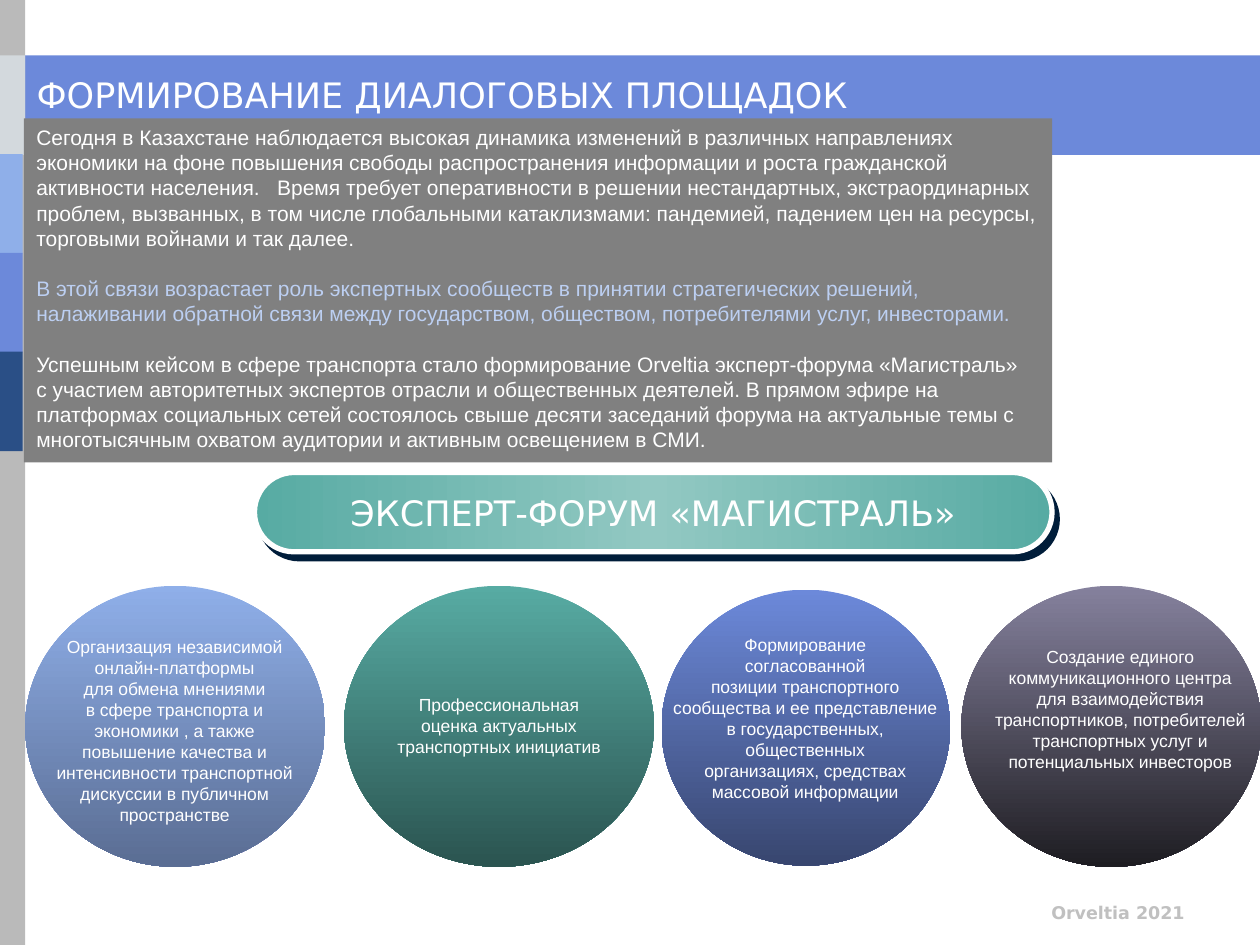
from pptx import Presentation
from pptx.dml.color import RGBColor
from pptx.enum.shapes import MSO_SHAPE as SHAPE
from pptx.enum.text import MSO_ANCHOR as ANCHOR, PP_ALIGN as ALIGN
from pptx.oxml import parse_xml
from pptx.oxml.ns import nsdecls
from pptx.util import Inches, Pt

SLIDE_W, SLIDE_H = 10, 7.5
BAND_TOP, BAND_H = 0.44, 0.79
LAST_BAND_TOP = 2.79
HEADING_FONT = "DejaVu Sans"
WHITE = "FFFFFF"

SIDE_BANDS = [(0, "D3D9DD"), (-0.02, "8FAFE9"), (-0.02, "6C89DA"), (-0.02, "2A4F86")]

BODY = [
    ("Сегодня в Казахстане наблюдается высокая динамика изменений в различных направлениях "
     "экономики на фоне повышения свободы распространения информации и роста гражданской "
     "активности населения.   Время требует оперативности в решении нестандартных, "
     "экстраординарных проблем, вызванных, в том числе глобальными катаклизмами: пандемией, "
     "падением цен на ресурсы, торговыми войнами и так далее.", WHITE),
    ("В этой связи возрастает роль экспертных сообществ в принятии стратегических решений, "
     "налаживании обратной связи между государством, обществом, потребителями услуг, "
     "инвесторами.", "BCCFF2"),
    ("Успешным кейсом в сфере транспорта стало формирование Orveltia эксперт-форума "
     "«Магистраль»  с участием авторитетных экспертов отрасли и общественных деятелей. "
     "В прямом эфире на платформах социальных сетей состоялось свыше десяти заседаний форума "
     "на актуальные темы с многотысячным охватом аудитории и активным освещением в СМИ.", WHITE),
]

# Ellipse box, gradient ends, text box, lines of text
GOALS = [
    ((0.2, 4.65, 2.38, 2.23), ("8FAFE9", "5A6D93"), (-0.23, 5, 3.23, 1.18),
     ["Организация независимой", "онлайн-платформы", "для обмена мнениями",
      "в сфере транспорта и", "экономики , а также", "повышение качества и",
      "интенсивности транспортной", "дискуссии в публичном", "пространстве"]),
    ((2.73, 4.65, 2.46, 2.23), ("57ABA3", "2B5450"), (2.73, 5.46, 2.46, 0.61),
     ["Профессиональная", "оценка актуальных", "транспортных инициатив"]),
    ((5.25, 4.68, 2.29, 2.19), ("6C89DA", "38466F"), (3.89, 4.98, 5, 1.45),
     ["Формирование", "согласованной", "позиции транспортного",
      "сообщества и ее представление", "в государственных,", "общественных",
      "организациях, средствах", "массовой информации"]),
    ((7.63, 4.65, 2.38, 2.23), ("85819D", "1E1D22"), (6.39, 5.08, 5, 1.11),
     ["Создание единого", "коммуникационного центра", "для взаимодействия",
      "транспортников, потребителей", "транспортных услуг и", "потенциальных инвесторов"]),
]


def rgb(color):
    return RGBColor.from_string(color)


def inches(box):
    return [Inches(v) for v in box]


def set_gradient(sp, colors, angle):
    """Spread the colors evenly along a line turned clockwise by angle degrees."""
    last = len(colors) - 1
    stops = "".join(f'<a:gs pos="{100000 * i // last}"><a:srgbClr val="{c}"/></a:gs>'
                    for i, c in enumerate(colors))
    fill = parse_xml(f'<a:gradFill {nsdecls("a")} rotWithShape="1"><a:gsLst>{stops}</a:gsLst>'
                     f'<a:lin ang="{angle * 60000}" scaled="0"/></a:gradFill>')
    sp._element.spPr.prstGeom.addnext(fill)


def add_hard_shadow(sp, color, distance, angle):
    effects = sp._element.spPr.find("{http://schemas.openxmlformats.org/drawingml/2006/main}effectLst")
    effects.append(parse_xml(
        f'<a:outerShdw {nsdecls("a")} blurRad="0" dist="{Pt(distance)}" dir="{angle * 60000}" '
        f'algn="ctr" rotWithShape="0"><a:srgbClr val="{color}"/></a:outerShdw>'))


def add_shape(slide, kind, box, fill=None, gradient=None, angle=90):
    sp = slide.shapes.add_shape(kind, *inches(box))
    sp.shadow.inherit = False
    sp.line.fill.background()
    if gradient:
        set_gradient(sp, gradient, angle)
    else:
        sp.fill.solid()
        sp.fill.fore_color.rgb = rgb(fill)
    return sp


def write(sp, paragraphs, size, font="Arial", align=ALIGN.CENTER, anchor=ANCHOR.TOP,
          bold=False, wrap=True, gap=0):
    """Fill a shape with (text, color) paragraphs set gap points apart."""
    tf = sp.text_frame
    tf.word_wrap = wrap
    tf.vertical_anchor = anchor
    for i, (text, color) in enumerate(paragraphs):
        p = tf.add_paragraph() if i else tf.paragraphs[0]
        p.alignment = align
        if i and gap:
            p.space_before = Pt(gap)
        r = p.add_run()
        r.text = text
        r.font.size, r.font.name, r.font.bold = Pt(size), font, bold
        r.font.color.rgb = rgb(color)


def add_text(slide, box, paragraphs, **format):
    write(slide.shapes.add_textbox(*inches(box)), paragraphs, **format)


def add_backdrop(slide):
    add_shape(slide, SHAPE.RECTANGLE, (0, BAND_TOP, SLIDE_W, BAND_H), "6C89DA")
    add_shape(slide, SHAPE.RECTANGLE, (-0.01, 0, 0.21, SLIDE_H), "BABABA")
    step = (LAST_BAND_TOP - BAND_TOP) / (len(SIDE_BANDS) - 1)
    for i, (left, color) in enumerate(SIDE_BANDS):
        add_shape(slide, SHAPE.RECTANGLE, (left, BAND_TOP + i * step, 0.2, BAND_H), color)


def add_title(slide, text):
    title = slide.shapes.title
    title.left, title.top, title.width, title.height = inches((-0.53, BAND_TOP, 8.08, 0.62))
    write(title, [(text, WHITE)], size=20, font=HEADING_FONT, anchor=ANCHOR.MIDDLE)
    slide.shapes._spTree.append(title._element)  # in front of the backdrop


def add_forum_pill(slide, text):
    sp = add_shape(slide, SHAPE.ROUNDED_RECTANGLE, (2.02, 3.75, 6.33, 0.63),
                   gradient=("57ABA3", "92C8C2", "57ABA3"), angle=0)
    sp.adjustments[0] = 0.5
    sp.line.color.rgb = rgb(WHITE)
    sp.line.width = Pt(3)
    add_hard_shadow(sp, "001D3A", 5, 53)
    write(sp, [(text, WHITE)], size=20, font=HEADING_FONT, anchor=ANCHOR.MIDDLE, wrap=False)


def main():
    prs = Presentation()
    prs.slide_width, prs.slide_height = Inches(SLIDE_W), Inches(SLIDE_H)
    slide = prs.slides.add_slide(prs.slide_layouts[5])

    add_backdrop(slide)
    add_text(slide, (6.33, 7.11, 3.17, 0.25), [("Orveltia 2021", "C0C0C0")],
             size=10, font=HEADING_FONT, align=ALIGN.RIGHT, bold=True)
    add_title(slide, "ФОРМИРОВАНИЕ ДИАЛОГОВЫХ ПЛОЩАДОК")
    add_forum_pill(slide, "ЭКСПЕРТ-ФОРУМ «МАГИСТРАЛЬ»")

    for ellipse, gradient, _, _ in GOALS:
        add_shape(slide, SHAPE.OVAL, ellipse, gradient=gradient)
    for _, _, box, lines in GOALS:
        add_text(slide, box, [(line, WHITE) for line in lines], size=10)

    panel = add_shape(slide, SHAPE.RECTANGLE, (0.19, 0.94, 8.16, 2.73), "808080")
    write(panel, BODY, size=12, align=ALIGN.LEFT, gap=14.4)

    prs.save("out.pptx")


if __name__ == "__main__":
    main()
